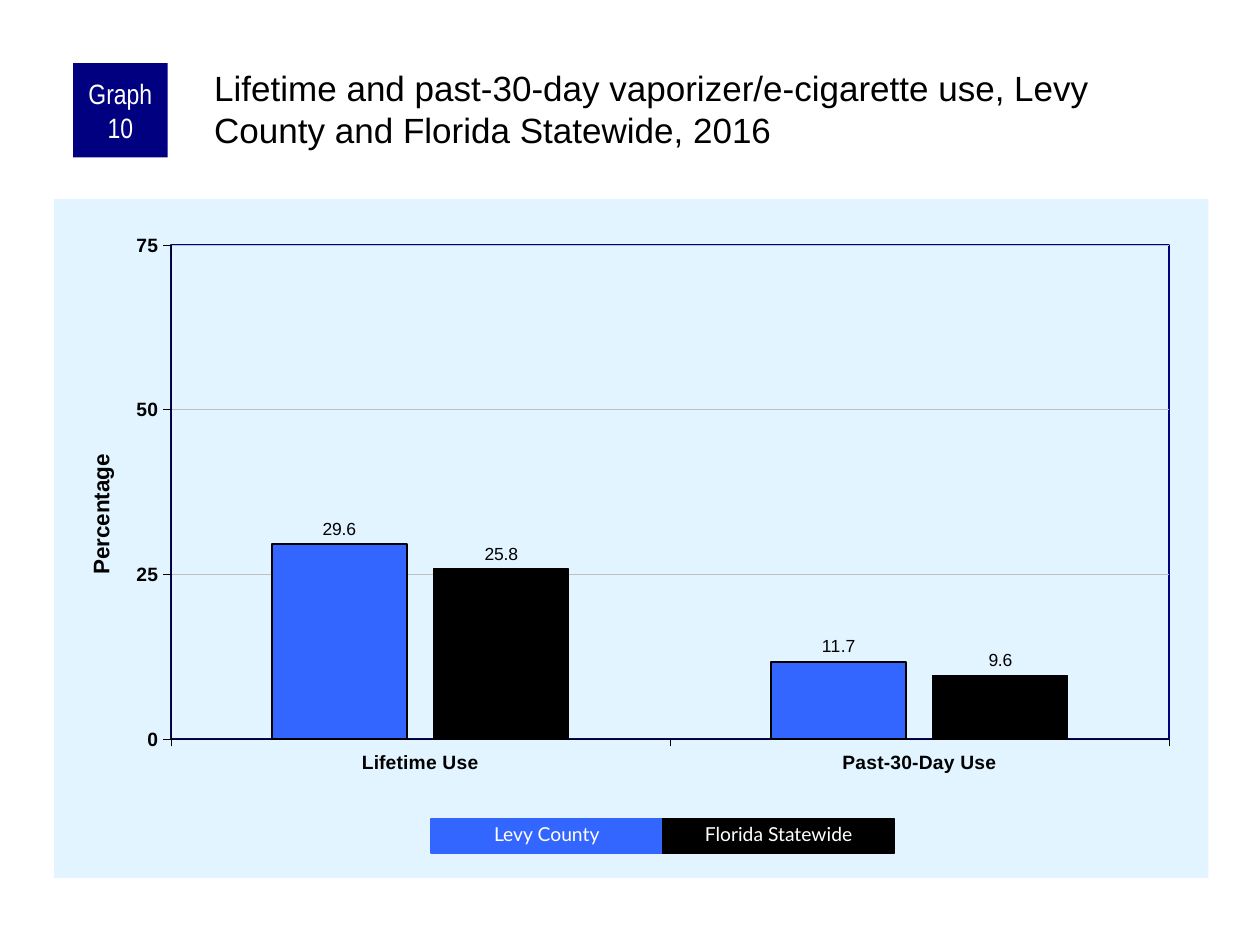
from lxml import etree
from pptx import Presentation
from pptx import util as u
from pptx.chart.data import CategoryChartData
from pptx.dml.color import RGBColor
from pptx.enum import chart as ch, shapes, text
from pptx.oxml import parse_xml
from pptx.oxml.ns import nsdecls, qn

PX = 9144  # EMU per px, 100 px to the inch
NAVY = RGBColor(0x00, 0x00, 0x80)
BLUE = RGBColor(0x33, 0x66, 0xFF)
PALE = RGBColor(0xE1, 0xF4, 0xFF)
GREY = RGBColor(0xC0, 0xC0, 0xC0)
BLACK = RGBColor(0x00, 0x00, 0x00)
WHITE = RGBColor(0xFF, 0xFF, 0xFF)


def set_font(font, size, color=BLACK, name="Arial", bold=False):
    font.size, font.name, font.bold = u.Pt(size), name, bold
    font.color.rgb = color


def set_line(line, color, width):
    line.color.rgb, line.width = color, u.Pt(width)


def set_layout(parent, index, **place):
    """Place a chart part by fractions of the chart's size."""
    for old in parent.findall(qn("c:layout")):
        parent.remove(old)
    layout = parse_xml(f"<c:layout {nsdecls('c')}><c:manualLayout/></c:layout>")
    for tag, value in place.items():
        etree.SubElement(layout[0], qn(f"c:{tag}")).set("val", str(value))
    parent.insert(index, layout)


class Deck:
    def __init__(self, width, height):
        self.prs = Presentation()
        self.prs.slide_width, self.prs.slide_height = width * PX, height * PX
        self.s = self.prs.slides.add_slide(self.prs.slide_layouts[6])

    def set_text(self, sp, words, size, color, name, align, margins, spacing=None):
        tf = sp.text_frame
        tf.word_wrap = True
        tf.margin_left, tf.margin_top, tf.margin_right, tf.margin_bottom = (
            m * PX for m in margins)
        p = tf.paragraphs[0]
        p.text, p.alignment, p.line_spacing = words, align, spacing
        set_font(p.font, size, color, name)

    def box(self, place, words, fill, size, name, margins, line=None, spacing=None):
        sp = self.s.shapes.add_shape(
            shapes.MSO_SHAPE.RECTANGLE, *(n * PX for n in place))
        sp.shadow.inherit = False
        sp.fill.solid()
        sp.fill.fore_color.rgb = fill
        if line is None:
            sp.line.fill.background()
        else:
            set_line(sp.line, line, 0.75)
        sp.text_frame.vertical_anchor = text.MSO_ANCHOR.MIDDLE
        self.set_text(sp, words, size, WHITE, name, text.PP_ALIGN.CENTER, margins, spacing)
        return sp

    def title(self, place, words):
        sp = self.s.shapes.add_textbox(*(n * PX for n in place))
        self.set_text(sp, words, 20, BLACK, "Arial", text.PP_ALIGN.LEFT, (3, 3, 0, 0))

    def columns(self, place, categories, series):
        data = CategoryChartData(number_format="0.0")
        data.categories = categories
        for name, values, *_ in series:
            data.add_series(name, values)
        chart = self.s.shapes.add_chart(
            ch.XL_CHART_TYPE.COLUMN_CLUSTERED, *(n * PX for n in place), data).chart
        chart.has_title = chart.has_legend = False
        set_font(chart.font, 11.5)
        self.chart_areas(chart)
        self.axes(chart)

        plot = chart.plots[0]
        plot.gap_width, plot.overlap, plot.vary_by_categories = 150, -20, False
        for ser, (_, _, color, width) in zip(plot.series, series):
            ser.format.fill.solid()
            ser.format.fill.fore_color.rgb = color
            set_line(ser.format.line, BLACK, width)
            labels = ser.data_labels
            labels.show_value = True
            labels.number_format, labels.number_format_is_linked = "0.0", False
            labels.position = ch.XL_LABEL_POSITION.OUTSIDE_END
            set_font(labels.font, 10)

    def chart_areas(self, chart):
        # Pale chart background, navy frame round the plot
        space = chart._chartSpace
        area = space.find(qn("c:chart")).find(qn("c:plotArea"))
        set_layout(area, 0, layoutTarget="inner", xMode="edge", yMode="edge",
                   x=0.101, y=0.068, w=0.865, h=0.727)
        area.append(parse_xml(
            f'<c:spPr {nsdecls("c", "a")}><a:noFill/><a:ln w="12700"><a:solidFill>'
            f'<a:srgbClr val="{NAVY}"/></a:solidFill></a:ln></c:spPr>'))
        space.find(qn("c:chart")).addnext(parse_xml(
            f'<c:spPr {nsdecls("c", "a")}><a:solidFill><a:srgbClr val="{PALE}"/>'
            f'</a:solidFill><a:ln><a:noFill/></a:ln></c:spPr>'))

    def axes(self, chart):
        value = chart.value_axis
        for axis in (chart.category_axis, value):
            axis.major_tick_mark = ch.XL_TICK_MARK.OUTSIDE
            axis.minor_tick_mark = ch.XL_TICK_MARK.NONE
            set_font(axis.tick_labels.font, 11, bold=True)
            set_line(axis.format.line, BLACK, 0.25)
        value.minimum_scale, value.maximum_scale, value.major_unit = 0, 75, 25
        value.tick_labels.number_format = "0"
        value.tick_labels.number_format_is_linked = False
        set_line(value.major_gridlines.format.line, GREY, 0.25)
        p = value.axis_title.text_frame.paragraphs[0]
        p.add_run().text = "Percentage"
        set_font(p.font, 12.75, bold=True)
        set_layout(value.axis_title._element, 1, xMode="edge", yMode="edge",
                   x=0.025, y=0.37)


def main():
    deck = Deck(1000, 750)

    # Chart
    deck.columns((43, 158, 916, 539), ("Lifetime Use", "Past-30-Day Use"), (
        ("Series 1", (29.6, 11.7), BLUE, 1),
        ("Series 2", (25.8, 9.6), BLACK, 0.75)))

    # Heading
    deck.box((58, 50, 75, 75), "Graph 10", NAVY, 16, "Arial Narrow", (5, 0, 5, 0))
    deck.title((167, 50, 792, 83), "Lifetime and past-30-day vaporizer/e-cigarette use, "
               "Levy County and Florida Statewide, 2016")

    # Legend
    key_width = 184
    for i, (name, color) in enumerate((("Levy County", BLUE), ("Florida Statewide", BLACK))):
        sp = deck.box((342 + i * key_width, 650, key_width, 27), name, color, 11,
                      "Lato", (10, 5, 10, 5), line=color, spacing=0.9)
        sp.text_frame.vertical_anchor = text.MSO_ANCHOR.TOP
        sp.text_frame.auto_size = text.MSO_AUTO_SIZE.SHAPE_TO_FIT_TEXT

    deck.prs.save("out.pptx")


if __name__ == "__main__":
    main()
